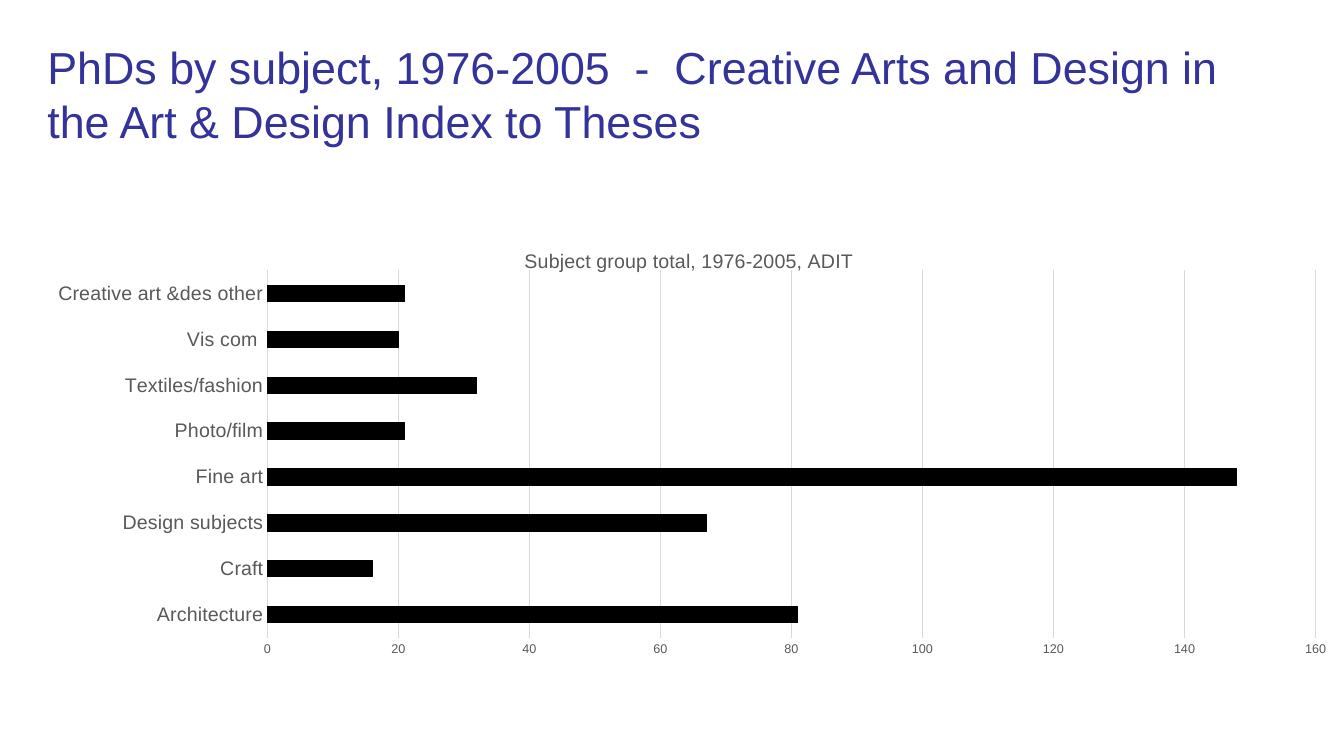
from lxml.etree import SubElement
from pptx import Presentation
from pptx.chart.data import CategoryChartData
from pptx.dml.color import RGBColor
from pptx.enum.chart import XL_CHART_TYPE, XL_TICK_MARK
from pptx.enum.text import MSO_ANCHOR, PP_ALIGN
from pptx.oxml.ns import qn
from pptx.util import Cm, Pt

TITLE = ("PhDs by subject, 1976-2005  -  Creative Arts and Design in "
         "the Art & Design Index to Theses")
HEAD = "Subject group total, 1976-2005, ADIT"
TOTALS = {
    "Architecture": 81,
    "Craft": 16,
    "Design subjects": 67,
    "Fine art": 148,
    "Photo/film": 21,
    "Textiles/fashion": 32,
    "Vis com ": 20,
    "Creative art &des other": 21,
}
COLORS = {"title": "333399", "bar": "000000", "label": "595959", "grid": "D9D9D9"}
FONT = "Arial"


def color(name):
    return RGBColor.from_string(COLORS[name])


def style(font, size, tint):
    font.name, font.size, font.bold = FONT, Pt(size), False
    font.color.rgb = color(tint)


def write(frame, text, size, tint, align=None):
    frame.text = text
    para = frame.paragraphs[0]
    para.alignment = align
    style(para.runs[0].font, size, tint)


def rule(line, tint):
    line.color.rgb = color(tint)
    line.width = Pt(0.75)


def place(node, index, inner=False, **parts):
    """Give a chart part a manual layout, in fractions of the chart."""
    for old in node.findall(qn("c:layout")):
        node.remove(old)
    layout = SubElement(node, qn("c:layout"))
    node.insert(index, layout)
    manual = SubElement(layout, qn("c:manualLayout"))
    if inner:
        SubElement(manual, qn("c:layoutTarget")).set("val", "inner")
    for key in ("x", "y"):
        SubElement(manual, qn(f"c:{key}Mode")).set("val", "edge")
    for key, value in parts.items():
        SubElement(manual, qn(f"c:{key}")).set("val", str(value))


def add_title(slide):
    title = slide.shapes.title
    title.left, title.top = Cm(0.94), Cm(0.76)
    title.width, title.height = Cm(31.78), Cm(3.18)
    frame = title.text_frame
    frame.word_wrap = True
    frame.vertical_anchor = MSO_ANCHOR.MIDDLE
    write(frame, TITLE, 32, "title", PP_ALIGN.LEFT)


def add_bars(slide):
    data = CategoryChartData()
    data.categories = list(TOTALS)
    data.add_series("Series 1", list(TOTALS.values()))
    chart = slide.shapes.add_chart(
        XL_CHART_TYPE.BAR_CLUSTERED, Cm(0.94), Cm(5.72), Cm(32.94), Cm(11.3), data
    ).chart
    style(chart.font, 10, "bar")
    chart.has_legend = False
    write(chart.chart_title.text_frame, HEAD, 14, "label")

    plot = chart.plots[0]
    plot.gap_width = 182
    plot.vary_by_categories = False
    bars = plot.series[0].format
    bars.fill.solid()
    bars.fill.fore_color.rgb = color("bar")
    rule(bars.line, "bar")

    names, scale = chart.category_axis, chart.value_axis
    for axis, size in ((names, 14), (scale, 9)):
        axis.major_tick_mark = axis.minor_tick_mark = XL_TICK_MARK.NONE
        style(axis.tick_labels.font, size, "label")
    rule(names.format.line, "grid")
    scale.format.line.fill.background()
    scale.minimum_scale, scale.maximum_scale, scale.major_unit = 0, 160, 20
    scale.has_major_gridlines = True
    rule(scale.major_gridlines.format.line, "grid")

    body = chart.element.find(qn("c:chart"))
    place(body.find(qn("c:title")), 1, x=0.37, y=0.04)
    place(body.find(qn("c:plotArea")), 0, inner=True, x=0.176, y=0.097, w=0.802, h=0.819)


def main():
    deck = Presentation()
    deck.slide_width, deck.slide_height = Cm(33.87), Cm(19.05)
    slide = deck.slides.add_slide(deck.slide_layouts[5])
    add_title(slide)
    add_bars(slide)
    deck.save("out.pptx")


if __name__ == "__main__":
    main()
